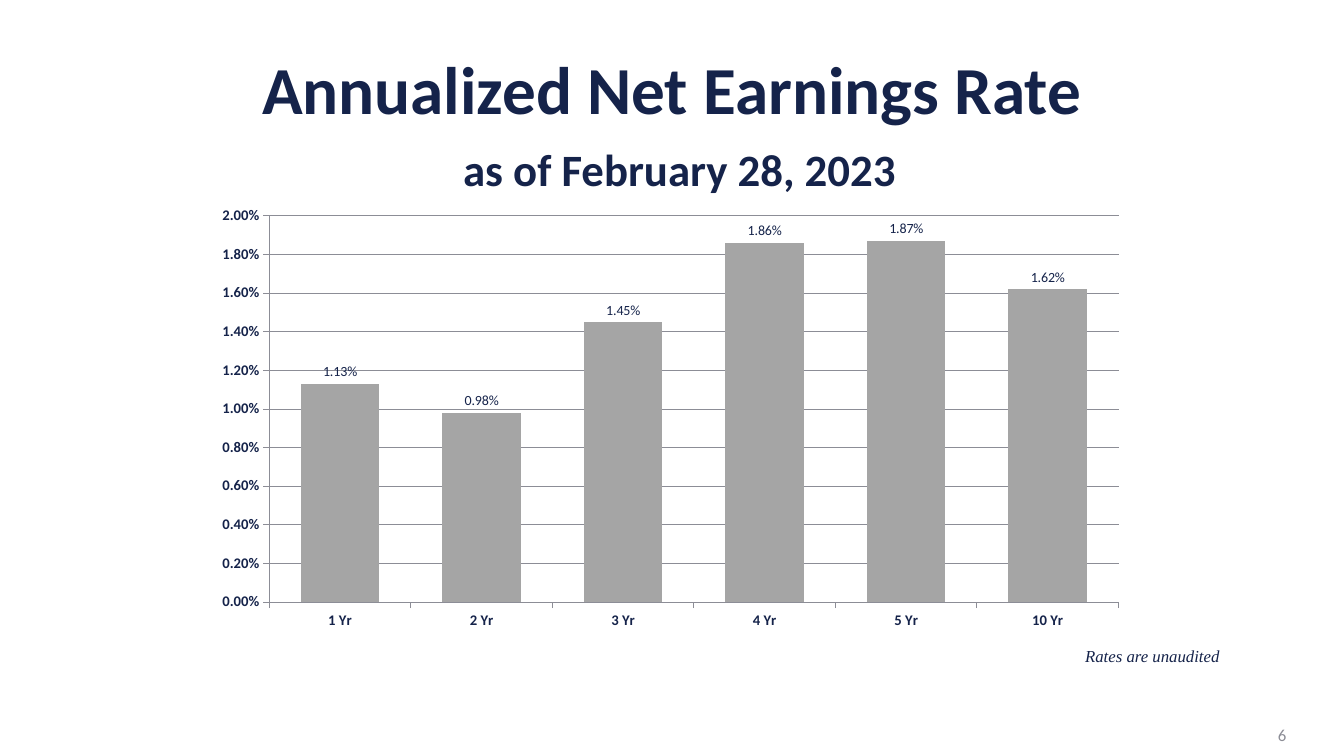
"""Build the annualized net earnings rate slide."""
import dataclasses

import lxml.etree
import pptx
import pptx.chart.axis
import pptx.chart.chart
import pptx.chart.data
import pptx.dml.color
import pptx.enum.chart
import pptx.enum.text
import pptx.oxml
import pptx.oxml.ns
import pptx.slide
import pptx.text.text
import pptx.util

Pt = pptx.util.Pt
RGB = pptx.dml.color.RGBColor
Align = pptx.enum.text.PP_ALIGN
Anchor = pptx.enum.text.MSO_ANCHOR


@dataclasses.dataclass(frozen=True)
class Theme:
    navy: RGB = RGB(0x15, 0x23, 0x4A)
    bar: RGB = RGB(0xA5, 0xA5, 0xA5)
    grey: RGB = RGB(0x8C, 0x8D, 0x96)
    sans: str = "Calibri"
    serif: str = "Times New Roman"
    title: float = 48
    date: float = 32
    chart: float = 18
    axis: float = 10.5
    label: float = 10
    small: float = 12


@dataclasses.dataclass(frozen=True)
class Box:
    left: float
    top: float
    width: float
    height: float

    def lengths(self) -> tuple[pptx.util.Length, ...]:
        return tuple(Pt(value) for value in dataclasses.astuple(self))


@dataclasses.dataclass(frozen=True)
class Caption:
    text: str
    box: Box
    font: str
    color: RGB
    align: Align
    anchor: Anchor
    italic: bool = False


THEME = Theme()
RATES = {"1 Yr": 0.0113, "2 Yr": 0.0098, "3 Yr": 0.0145,
         "4 Yr": 0.0186, "5 Yr": 0.0187, "10 Yr": 0.0162}
PERCENT = "0.00%"
PLOT_AREA = {"x": 0.065, "y": 0.031, "w": 0.931, "h": 0.833}
TITLE_BOX = Box(48, 60, 864, 64)
CHART_BOX = Box(150, 144, 651.6, 331.2)
CAPTIONS = [
    Caption("6", Box(710, 510.5, 216, 28.8), THEME.sans, THEME.grey, Align.RIGHT, Anchor.MIDDLE),
    Caption("Rates are unaudited", Box(768, 458, 168, 21.6), THEME.serif, THEME.navy,
            Align.LEFT, Anchor.TOP, italic=True),
]


def style_font(font: pptx.text.text.Font, size: float, color: RGB,
               name: str = THEME.sans, bold: bool = False) -> None:
    font.name = name
    font.size = Pt(size)
    font.bold = bold
    font.color.rgb = color


def add_title(slide: pptx.slide.Slide) -> None:
    title = slide.shapes.title
    title.left, title.top, title.width, title.height = TITLE_BOX.lengths()
    title.text_frame.vertical_anchor = Anchor.MIDDLE
    heading = title.text_frame.paragraphs[0]
    heading.text = "Annualized Net Earnings Rate\v "
    heading.alignment = Align.CENTER
    heading.line_spacing = 0.9
    for run in heading.runs:
        style_font(run.font, THEME.title, THEME.navy, bold=True)
    date = heading.add_run()
    date.text = "as of February 28, 2023"
    style_font(date.font, THEME.date, THEME.navy, bold=True)


def add_caption(slide: pptx.slide.Slide, caption: Caption) -> None:
    frame = slide.shapes.add_textbox(*caption.box.lengths()).text_frame
    frame.word_wrap = True
    frame.vertical_anchor = caption.anchor
    frame.text = caption.text
    frame.paragraphs[0].alignment = caption.align
    font = frame.paragraphs[0].runs[0].font
    style_font(font, THEME.small, caption.color, caption.font)
    font.italic = caption.italic


def style_axis(axis: pptx.chart.axis._BaseAxis) -> None:
    style_font(axis.tick_labels.font, THEME.axis, THEME.navy, bold=True)
    axis.major_tick_mark = pptx.enum.chart.XL_TICK_MARK.OUTSIDE
    axis.minor_tick_mark = pptx.enum.chart.XL_TICK_MARK.NONE
    axis.format.line.color.rgb = THEME.grey
    axis.format.line.width = Pt(0.75)


def place_plot(chart: pptx.chart.chart.Chart) -> None:
    qn = pptx.oxml.ns.qn
    plot_area = chart._chartSpace.find(".//" + qn("c:plotArea"))
    for old_layout in plot_area.findall(qn("c:layout")):
        plot_area.remove(old_layout)
    layout = pptx.oxml.parse_xml(f"<c:layout {pptx.oxml.ns.nsdecls('c')}><c:manualLayout/></c:layout>")
    settings = {"layoutTarget": "inner", "xMode": "edge", "yMode": "edge"} | PLOT_AREA
    for tag, value in settings.items():
        lxml.etree.SubElement(layout[0], qn(f"c:{tag}")).set("val", str(value))
    plot_area.insert(0, layout)


def add_rates_chart(slide: pptx.slide.Slide) -> None:
    data = pptx.chart.data.CategoryChartData(number_format=PERCENT)
    data.categories = list(RATES)
    data.add_series("Series 1", list(RATES.values()))
    chart = slide.shapes.add_chart(pptx.enum.chart.XL_CHART_TYPE.COLUMN_CLUSTERED,
                                   *CHART_BOX.lengths(), data).chart
    chart.has_legend = False
    chart.has_title = False
    style_font(chart.font, THEME.chart, THEME.navy)

    rate_axis = chart.value_axis
    for axis in (chart.category_axis, rate_axis):
        style_axis(axis)
    rate_axis.minimum_scale, rate_axis.maximum_scale, rate_axis.major_unit = 0, 0.02, 0.002
    rate_axis.tick_labels.number_format = PERCENT
    rate_axis.tick_labels.number_format_is_linked = False
    rate_axis.has_major_gridlines = True
    rate_axis.major_gridlines.format.line.color.rgb = THEME.grey
    rate_axis.major_gridlines.format.line.width = Pt(0.75)

    bars = chart.plots[0]
    bars.gap_width = 80
    bars.vary_by_categories = False
    bars.series[0].format.fill.solid()
    bars.series[0].format.fill.fore_color.rgb = THEME.bar
    labels = bars.series[0].data_labels
    labels.show_value = True
    labels.number_format = PERCENT
    labels.number_format_is_linked = False
    labels.position = pptx.enum.chart.XL_LABEL_POSITION.OUTSIDE_END
    style_font(labels.font, THEME.label, THEME.navy)
    place_plot(chart)


def main() -> None:
    deck = pptx.Presentation()
    deck.slide_width, deck.slide_height = Pt(960), Pt(540)
    slide = deck.slides.add_slide(deck.slide_layouts.get_by_name("Title Only"))
    add_title(slide)
    add_rates_chart(slide)
    for caption in CAPTIONS:
        add_caption(slide, caption)
    deck.save("out.pptx")


if __name__ == "__main__":
    main()
